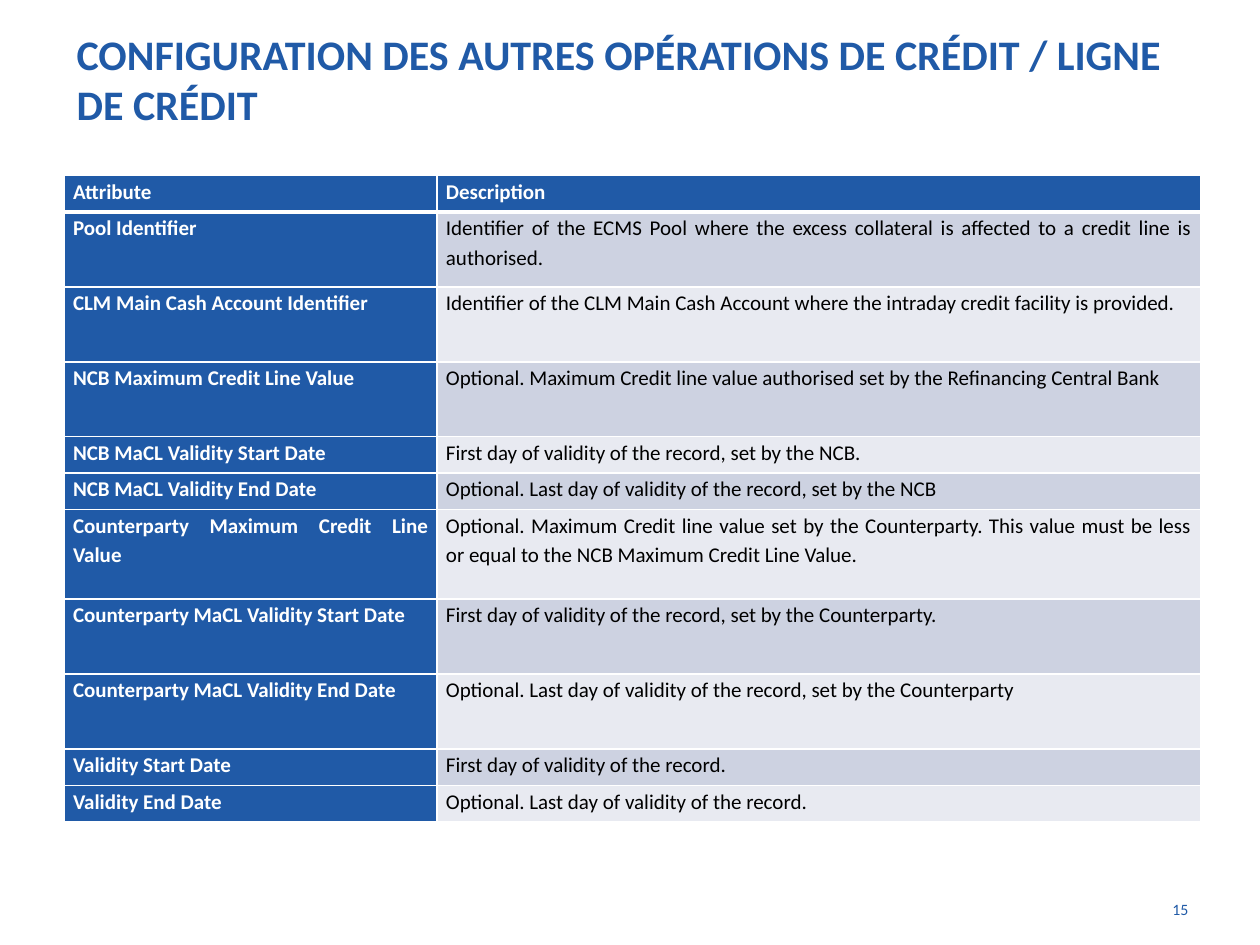
from lxml import etree
from pptx import Presentation, util as u
from pptx.dml.color import RGBColor
from pptx.enum import text
from pptx.oxml.ns import qn

SLIDE_WIDTH, SLIDE_HEIGHT = u.Inches(10), u.Inches(7.5)
BLUE, WHITE, BLACK = "205AA7", "FFFFFF", "000000"
BANDS = ("CDD2E1", "E8EAF1")
LEFT = 5.1  # left margin, percent of the slide width
COLUMNS = (29.6, 60.6)  # percent of the slide width
SINGLE, DOUBLE, TRIPLE = 3.84, 7.93, 9.52  # row heights, percent of the slide height

TITLE = "CONFIGURATION DES AUTRES OPÉRATIONS DE CRÉDIT / LIGNE DE CRÉDIT"
ROWS = [
    (SINGLE, "Attribute", "Description"),
    (DOUBLE, "Pool Identifier",
     "Identifier of the ECMS Pool where the excess collateral is affected to a credit line is authorised."),
    (DOUBLE, "CLM Main Cash Account Identifier",
     "Identifier of the CLM Main Cash Account where the intraday credit facility is provided."),
    (DOUBLE, "NCB Maximum Credit Line Value",
     "Optional. Maximum Credit line value authorised set by the Refinancing Central Bank"),
    (SINGLE, "NCB MaCL Validity Start Date", "First day of validity of the record, set by the NCB."),
    (SINGLE, "NCB MaCL Validity End Date", "Optional. Last day of validity of the record, set by the NCB"),
    (TRIPLE, "Counterparty Maximum Credit Line Value",
     "Optional. Maximum Credit line value set by the Counterparty. "
     "This value must be less or equal to the NCB Maximum Credit Line Value."),
    (DOUBLE, "Counterparty MaCL Validity Start Date",
     "First day of validity of the record, set by the Counterparty."),
    (DOUBLE, "Counterparty MaCL Validity End Date",
     "Optional. Last day of validity of the record, set by the Counterparty"),
    (SINGLE, "Validity Start Date", "First day of validity of the record."),
    (SINGLE, "Validity End Date", "Optional. Last day of validity of the record."),
]


def across(percent):
    return round(SLIDE_WIDTH * percent / 100)


def down(percent):
    return round(SLIDE_HEIGHT * percent / 100)


def colour(value):
    return RGBColor.from_string(value)


def set_values(target, **values):
    for name, value in values.items():
        setattr(target, name, value)


def write(frame, words, size, ink, bold=False, **layout):
    """Put one formatted paragraph into a text frame."""
    paragraph = frame.paragraphs[0]
    set_values(paragraph, **layout)
    run = paragraph.add_run()
    run.text = words
    set_values(run.font, name="Calibri", size=u.Pt(size), bold=bold)
    run.font.color.rgb = colour(ink)


def add_text(slide, left, top, width, height, words, anchor=text.MSO_ANCHOR.TOP, **style):
    box = slide.shapes.add_textbox(across(left), down(top), across(width), down(height))
    set_values(box.text_frame, word_wrap=True, vertical_anchor=anchor)
    write(box.text_frame, words, **style)


def add_borders(cell, **widths):
    """Draw white cell edges; widths are points keyed by edge letter."""
    properties = cell._tc.get_or_add_tcPr()
    for edge, width in widths.items():
        line = etree.SubElement(properties, qn(f"a:ln{edge}"), w=str(u.Pt(width)))
        fill = etree.SubElement(line, qn("a:solidFill"))
        etree.SubElement(fill, qn("a:srgbClr"), val=WHITE)


def fill_cell(cell, words, row, column):
    header = row == 0
    strong = header or column == 0
    add_borders(cell, L=1, R=1, T=3 if row == 1 else 1, B=3 if header else 1)
    cell.fill.solid()
    cell.fill.fore_color.rgb = colour(BLUE if strong else BANDS[(row - 1) % 2])
    set_values(cell, margin_left=u.Inches(0.07), margin_right=u.Inches(0.07),
               margin_top=0, margin_bottom=0)
    align = text.PP_ALIGN.LEFT if header else text.PP_ALIGN.JUSTIFY
    write(cell.text_frame, words, 12, WHITE if strong else BLACK, strong,
          alignment=align, line_spacing=1.15, space_after=u.Pt(3))


def add_attribute_table(slide, left, top):
    height = sum(row[0] for row in ROWS)
    table = slide.shapes.add_table(len(ROWS), len(COLUMNS), across(left), down(top),
                                   across(sum(COLUMNS)), down(height)).table
    for column, width in zip(table.columns, COLUMNS):
        column.width = across(width)
    for row, (row_height, *cells) in enumerate(ROWS):
        table.rows[row].height = down(row_height)
        for column, words in enumerate(cells):
            fill_cell(table.cell(row, column), words, row, column)


def main():
    presentation = Presentation()
    set_values(presentation, slide_width=SLIDE_WIDTH, slide_height=SLIDE_HEIGHT)
    slide = presentation.slides.add_slide(presentation.slide_layouts[6])
    add_text(slide, LEFT, 0, 90, 16.67, TITLE, text.MSO_ANCHOR.MIDDLE,
             size=24, ink=BLUE, bold=True)
    add_attribute_table(slide, LEFT, 18.6)
    add_text(slide, 89.4, 94.53, 5.9, 5.2, "15", size=9, ink=BLUE,
             alignment=text.PP_ALIGN.RIGHT)
    presentation.save("out.pptx")


if __name__ == "__main__":
    main()
